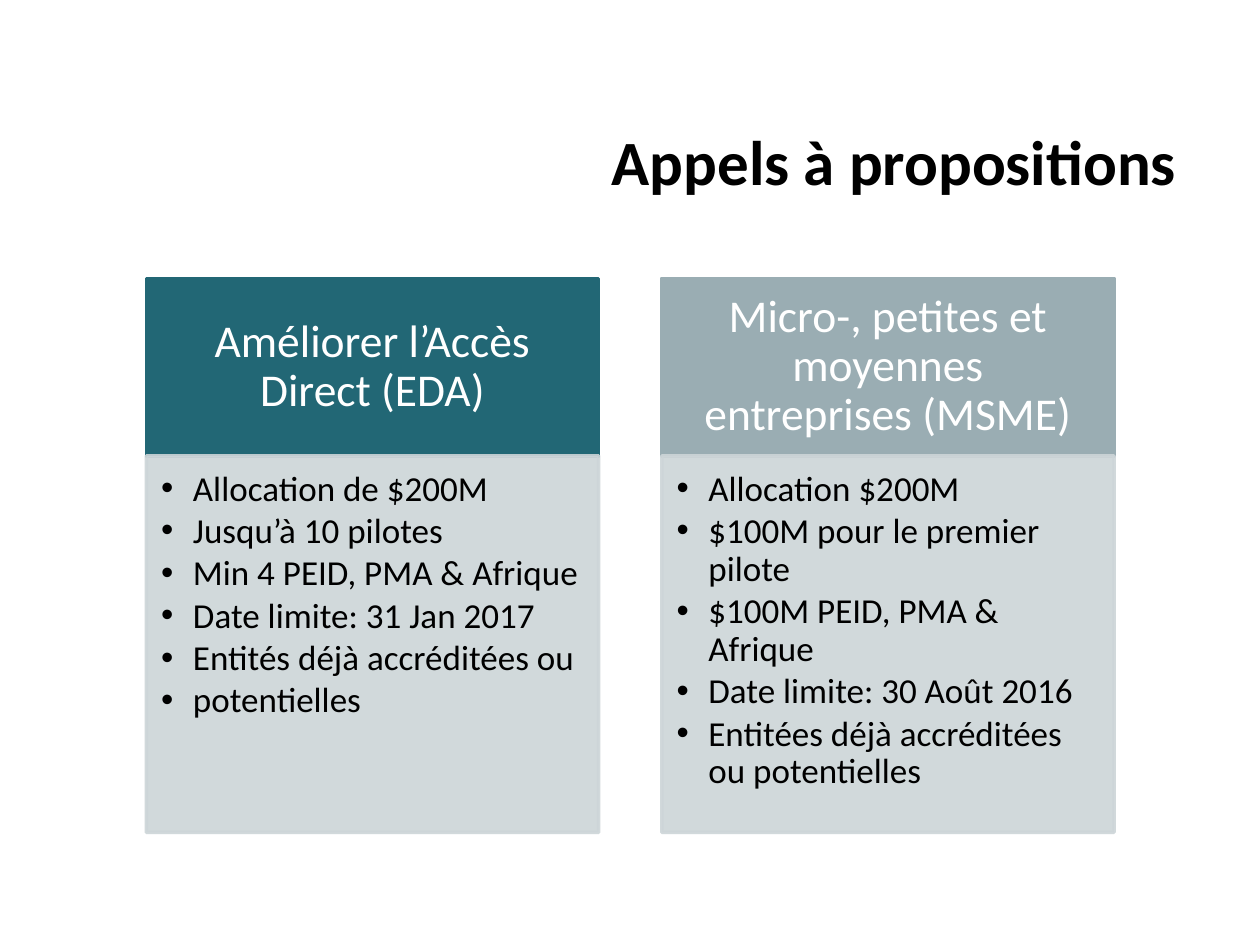
from lxml import etree
from pptx import Presentation
from pptx.dml.color import RGBColor
from pptx.enum.text import MSO_ANCHOR, MSO_AUTO_SIZE, PP_ALIGN
from pptx.oxml.ns import qn
from pptx.util import Cm, Pt

TOP, MIDDLE = MSO_ANCHOR.TOP, MSO_ANCHOR.MIDDLE
LEFT, CENTER, RIGHT = PP_ALIGN.LEFT, PP_ALIGN.CENTER, PP_ALIGN.RIGHT
NO_AUTOFIT = MSO_AUTO_SIZE.NONE

COMPARISON_LAYOUT = 4
FONT = "Calibri"
BLACK, WHITE, PALE = "000000", "FFFFFF", "CDD5D8"
COLUMN_LEFT, COLUMN_STEP, COLUMN_WIDTH = 2.95, 10.39, 9.12
HEADING_TOP, HEADING_HEIGHT, LIST_HEIGHT = 5.61, 3.58, 7.59
INDENT = Cm(0.64)

CALLS = [
    ("Améliorer l’Accès Direct (EDA)", "226775", [
        "Allocation de $200M",
        "Jusqu’à 10 pilotes",
        "Min 4 PEID, PMA & Afrique",
        "Date limite: 31 Jan 2017",
        "Entités déjà accréditées ou",
        "potentielles",
    ]),
    ("Micro-, petites et moyennes entreprises (MSME)", "9AADB3", [
        "Allocation $200M",
        "$100M pour le premier pilote",
        "$100M PEID, PMA & Afrique",
        "Date limite: 30 Août 2016",
        "Entitées déjà accréditées ou potentielles",
    ]),
]


def set_colour(target, colour, opacity=100):
    """Give a fill a solid colour and an opacity in percent."""
    target.solid()
    target.fore_color.rgb = RGBColor.from_string(colour)
    if opacity < 100:
        for choice in target._xPr.iter(qn("a:solidFill")):
            alpha = etree.SubElement(choice[0], qn("a:alpha"))
            alpha.set("val", str(opacity * 1000))


def place(box, left, top, width, height, margins, anchor):
    """Move a placeholder and set up its text frame."""
    box.left, box.top, box.width, box.height = map(Cm, (left, top, width, height))
    frame = box.text_frame
    frame.word_wrap = True
    frame.auto_size = NO_AUTOFIT
    frame.vertical_anchor = anchor
    (frame.margin_left, frame.margin_top,
     frame.margin_right, frame.margin_bottom) = map(Cm, margins)


def paint(box, colour, opacity=100):
    """Fill and outline a box in one colour."""
    set_colour(box.fill, colour, opacity)
    box.line.width = Pt(2)
    set_colour(box.line.fill, colour, opacity)


def write(para, text, size, colour, alignment, spacing, after=0, bold=False):
    """Write one formatted run into a paragraph."""
    para.alignment = alignment
    para.line_spacing = spacing
    para.space_before, para.space_after = Pt(0), Pt(after)
    span = para.add_run()
    span.text = text
    span.font.name = FONT
    span.font.size = Pt(size)
    span.font.bold = bold
    set_colour(span.font.fill, colour)


def write_title(box, text):
    """Place and write the slide title."""
    place(box, 1.52, 2.51, 22.45, 1.98, (0.25, 0.13, 0.25, 0.13), TOP)
    write(box.text_frame.paragraphs[0], text, 36, BLACK, RIGHT, Pt(38.4), bold=True)


def write_heading(box, left, text, colour):
    """Place and write the coloured heading of a column."""
    place(box, left, HEADING_TOP, COLUMN_WIDTH, HEADING_HEIGHT,
          (0.51, 0.3, 0.51, 0.3), MIDDLE)
    paint(box, colour)
    write(box.text_frame.paragraphs[0], text, 26, WHITE, CENTER, 0.9)


def write_list(box, left, items):
    """Place and write the bulleted list of a column."""
    place(box, left, HEADING_TOP + HEADING_HEIGHT, COLUMN_WIDTH, LIST_HEIGHT,
          (0.3, 0.3, 0.41, 0.43), TOP)
    paint(box, PALE, 90)
    frame = box.text_frame
    for number, item in enumerate(items):
        para = frame.add_paragraph() if number else frame.paragraphs[0]
        properties = para._p.get_or_add_pPr()
        properties.set("marL", str(INDENT))
        properties.set("indent", str(-INDENT))
        write(para, item, 20, BLACK, LEFT, 0.9, after=2.6)


def main():
    """Build the slide and save the deck."""
    deck = Presentation()
    deck.slide_width, deck.slide_height = Cm(25.4), Cm(19.05)
    page = deck.slides.add_slide(deck.slide_layouts[COMPARISON_LAYOUT])
    write_title(page.shapes.title, "Appels à propositions")
    for column, (heading, colour, items) in enumerate(CALLS):
        left = COLUMN_LEFT + column * COLUMN_STEP
        write_heading(page.placeholders[2 * column + 1], left, heading, colour)
        write_list(page.placeholders[2 * column + 2], left, items)
    deck.save("out.pptx")


if __name__ == "__main__":
    main()
